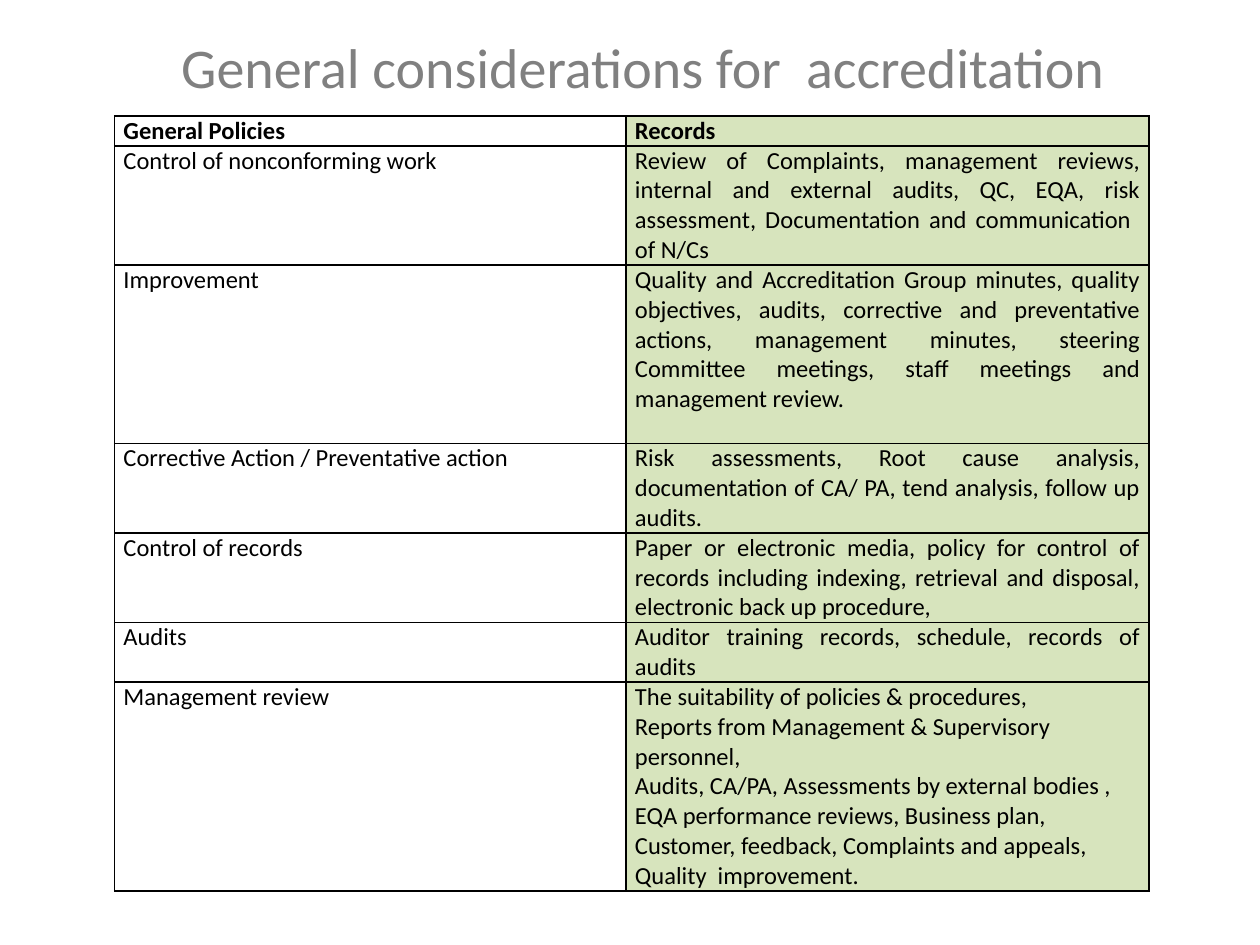
from pptx import Presentation
from pptx.dml.color import RGBColor
from pptx.enum import text as t
from pptx.oxml import parse_xml
from pptx.oxml.ns import nsdecls
from pptx.util import Inches, Pt

THEME = {
    "font": "Calibri",
    "title": (32, "808080"),
    "body": (14, "000000"),
    "fill": "D7E4BD",
    "rule": (1, "000000"),
}
TITLE = "General considerations for  accreditation"
HEAD = ("General Policies", "Records")
# Policy, paragraphs of records, row height in text lines
ROWS = [
    ("Control of nonconforming work",
     ["Review of Complaints, management reviews, internal and external audits, "
      "QC, EQA, risk assessment, Documentation and communication  of N/Cs"], 4),
    ("Improvement",
     ["Quality and Accreditation Group minutes, quality objectives, audits, "
      "corrective and preventative actions, management minutes, steering "
      "Committee meetings, staff meetings and management review."], 6),
    ("Corrective Action / Preventative action",
     ["Risk assessments, Root cause analysis, documentation of CA/ PA, "
      "tend analysis, follow up audits."], 3),
    ("Control of records",
     ["Paper or electronic media, policy for control of records including "
      "indexing, retrieval and disposal, electronic back up procedure,"], 3),
    ("Audits", ["Auditor training records, schedule, records of audits"], 2),
    ("Management review",
     ["The suitability of policies & procedures,",
      "Reports from Management & Supervisory personnel,",
      "Audits, CA/PA, Assessments by external bodies , EQA performance reviews, "
      "Business plan, Customer, feedback, Complaints and appeals, "
      "Quality  improvement."], 7),
]
LEFT, TOP = 0.91, 0.92
COLS = (4.06, 4.15)
LINE = 0.236


def style(par, kind, bold=False):
    size, color = THEME[kind]
    font = par.font
    font.name, font.size, font.bold = THEME["font"], Pt(size), bold
    font.color.rgb = RGBColor.from_string(color)


def border(cell):
    width, color = THEME["rule"]
    props = cell._tc.get_or_add_tcPr()
    for side in "LRTB":
        props.append(parse_xml(
            f'<a:ln{side} {nsdecls("a")} w="{Pt(width)}"><a:solidFill>'
            f'<a:srgbClr val="{color}"/></a:solidFill></a:ln{side}>'))


def fill_cell(cell, lines, shaded, justify, bold):
    cell.margin_left = cell.margin_right = Inches(0.07)
    cell.margin_top = cell.margin_bottom = 0
    border(cell)
    if shaded:
        cell.fill.solid()
        cell.fill.fore_color.rgb = RGBColor.from_string(THEME["fill"])
    else:
        cell.fill.background()
    cell.text_frame.text = "\n".join(lines)
    for par in cell.text_frame.paragraphs:
        par.alignment = t.PP_ALIGN.JUSTIFY if justify else t.PP_ALIGN.LEFT
        style(par, "body", bold)


def add_grid(slide):
    rows = [(HEAD[0], [HEAD[1]], 1)] + ROWS
    high = LINE * sum(row[2] for row in rows)
    grid = slide.shapes.add_table(
        len(rows), len(COLS), Inches(LEFT), Inches(TOP),
        Inches(sum(COLS)), Inches(high)).table
    grid.first_row = grid.horz_banding = False
    for col, width in zip(grid.columns, COLS):
        col.width = Inches(width)
    for i, (policy, records, count) in enumerate(rows):
        head = i == 0
        grid.rows[i].height = Inches(LINE * count)
        fill_cell(grid.cell(i, 0), [policy], False, head, head)
        fill_cell(grid.cell(i, 1), records, True, len(records) == 1, head)


def add_title(slide):
    box = slide.shapes.add_textbox(
        Inches(1.34), Inches(0.21), Inches(8.66), Inches(0.64))
    frame = box.text_frame
    frame.word_wrap = True
    frame.auto_size = t.MSO_AUTO_SIZE.SHAPE_TO_FIT_TEXT
    frame.text = TITLE
    style(frame.paragraphs[0], "title")


def main():
    deck = Presentation()
    deck.slide_width, deck.slide_height = Inches(10), Inches(7.5)
    slide = deck.slides.add_slide(deck.slide_layouts[6])
    add_grid(slide)
    add_title(slide)
    deck.save("out.pptx")


if __name__ == "__main__":
    main()
